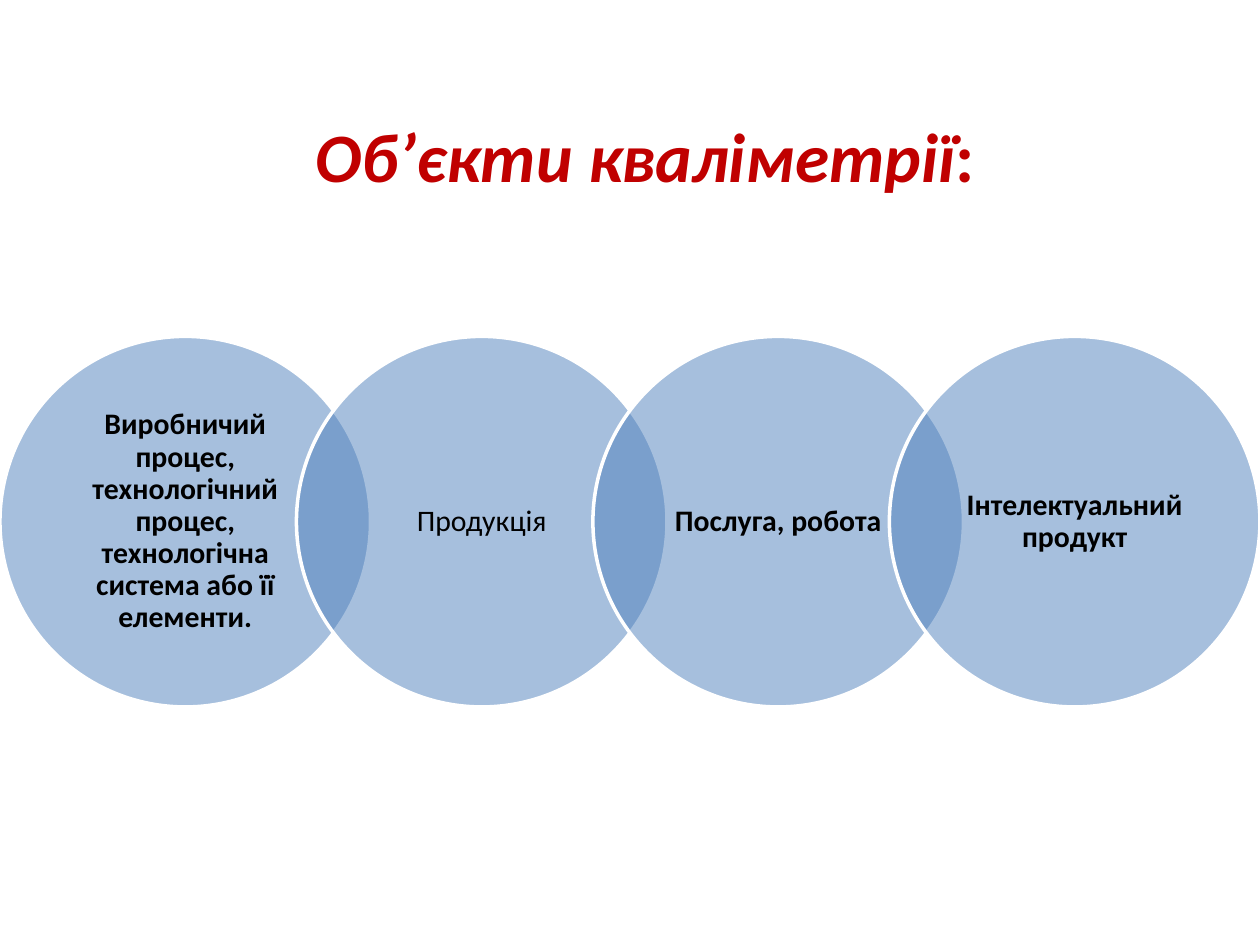
import pptx
import pptx.util
import pptx.dml.color
import pptx.enum.shapes
import pptx.enum.text
import pptx.oxml
import pptx.oxml.ns
import lxml.etree

Pt = pptx.util.Pt
COLORS = {"title": "C00000", "circle": "4F81BD", "outline": "FFFFFF", "text": "000000"}
OBJECTS = [
    ("Виробничий процес, технологічний процес, технологічна система або її елементи.", True),
    ("Продукція", False),
    ("Послуга, робота", True),
    ("Інтелектуальний продукт", True),
]
SLIDE_WIDTH = 720
DIAMETER = 211.76
STEP = (SLIDE_WIDTH - DIAMETER) / (len(OBJECTS) - 1)
CIRCLE_TOP = 192.24
TEXT_SIZE = 149.76
TEXT_INSET = (DIAMETER - TEXT_SIZE) / 2


def color(name):
    return pptx.dml.color.RGBColor.from_string(COLORS[name])


def add_text(shapes, box, margins):
    shape = shapes.add_textbox(*[Pt(length) for length in box])
    frame = shape.text_frame
    frame.word_wrap = True
    frame.vertical_anchor = pptx.enum.text.MSO_ANCHOR.MIDDLE
    frame.margin_left, frame.margin_top, frame.margin_right, frame.margin_bottom = [
        Pt(margin) for margin in margins
    ]
    paragraph = frame.paragraphs[0]
    paragraph.alignment = pptx.enum.text.PP_ALIGN.CENTER
    paragraph.font.name = "Calibri"
    return paragraph


presentation = pptx.Presentation()
presentation.slide_width = Pt(SLIDE_WIDTH)
presentation.slide_height = Pt(540)
slide = presentation.slides.add_slide(presentation.slide_layouts[6])

title = add_text(slide.shapes, (44.64, 67.68, 648, 90), (7.2, 3.6, 7.2, 51.6))
for text, italic in [("Об’єкти кваліметрії", True), (":", False)]:
    run = title.add_run()
    run.text = text
    run.font.name = "Calibri"
    run.font.size = Pt(39.6)
    run.font.bold = True
    run.font.italic = italic
    run.font.color.rgb = color("title")

diagram = slide.shapes.add_group_shape()
for index, (text, bold) in enumerate(OBJECTS):
    left = index * STEP
    circle = diagram.shapes.add_shape(
        pptx.enum.shapes.MSO_SHAPE.OVAL, Pt(left), Pt(CIRCLE_TOP), Pt(DIAMETER), Pt(DIAMETER)
    )
    circle.shadow.inherit = False
    circle.fill.solid()
    circle.fill.fore_color.rgb = color("circle")
    fill_color = circle.fill._xPr.find(".//" + pptx.oxml.ns.qn("a:srgbClr"))
    lxml.etree.SubElement(fill_color, pptx.oxml.ns.qn("a:alpha"), val="50000")
    circle.line.color.rgb = color("outline")
    circle.line.width = Pt(2)

    box = (left + TEXT_INSET, CIRCLE_TOP + TEXT_INSET, TEXT_SIZE, TEXT_SIZE)
    label = add_text(diagram.shapes, box, (11.65, 1.5, 11.65, 1.5))
    label.line_spacing = 0.9
    run = label.add_run()
    run.text = text
    run.font.name = "Calibri"
    run.font.size = Pt(17)
    run.font.bold = bold
    run.font.color.rgb = color("text")

presentation.save("out.pptx")
